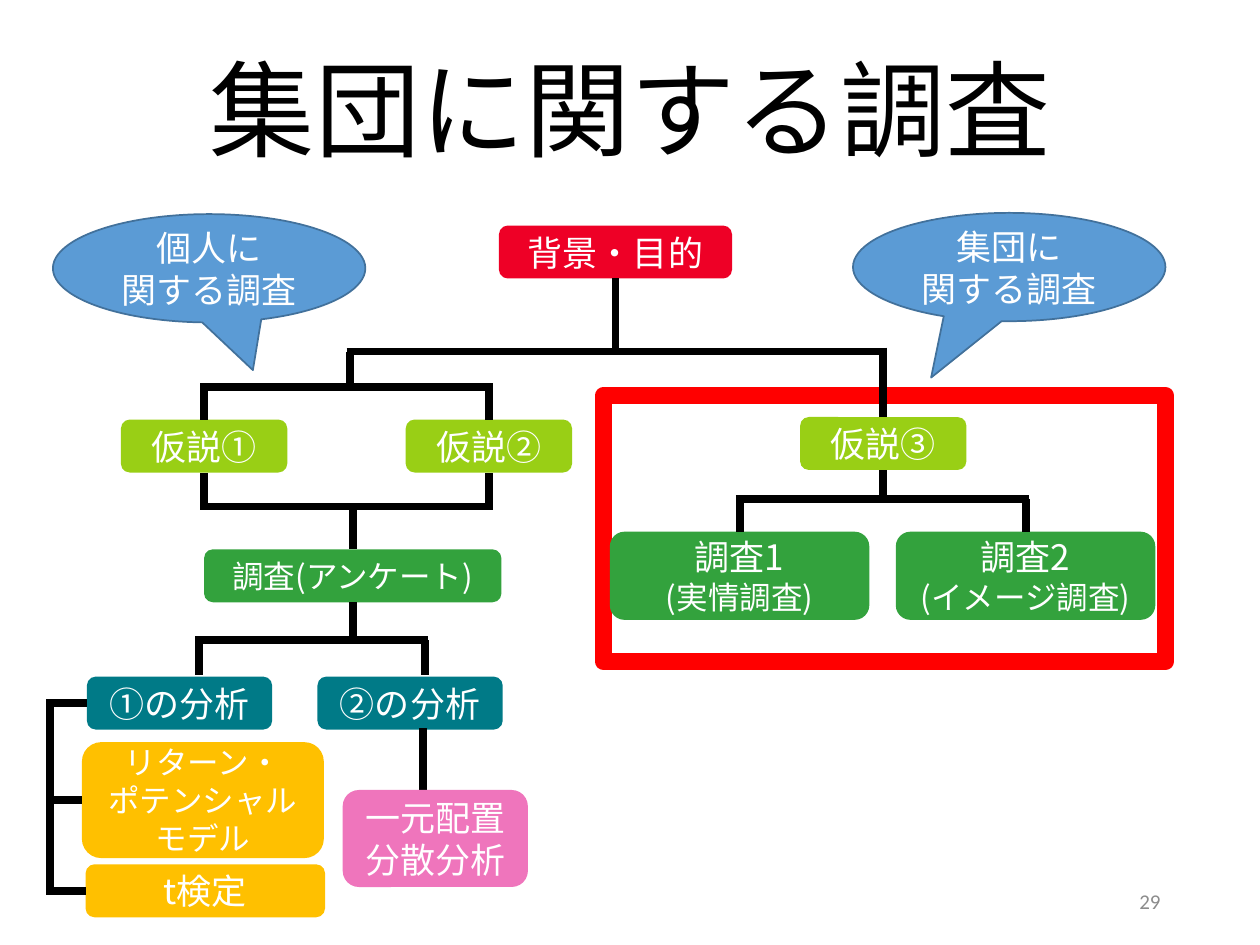
from lxml import etree
from pptx import Presentation
from pptx.dml.color import RGBColor
from pptx.enum.shapes import MSO_CONNECTOR, MSO_SHAPE
from pptx.enum.text import MSO_ANCHOR, MSO_AUTO_SIZE, PP_ALIGN
from pptx.oxml.ns import qn
from pptx.util import Inches, Pt

RECTANGLE = MSO_SHAPE.RECTANGLE
ROUNDED = MSO_SHAPE.ROUNDED_RECTANGLE
CALLOUT = MSO_SHAPE.OVAL_CALLOUT
STRAIGHT = MSO_CONNECTOR.STRAIGHT
CENTER, RIGHT = PP_ALIGN.CENTER, PP_ALIGN.RIGHT
MIDDLE, BOTTOM_ANCHOR = MSO_ANCHOR.MIDDLE, MSO_ANCHOR.BOTTOM
NO_AUTOFIT = MSO_AUTO_SIZE.NONE

TOP, LEFT, BOTTOM = 0, 1, 2  # connection sites of a rectangle
JAPANESE, LATIN = "Noto Sans CJK JP", "Calibri"
WHITE, BLACK, RED, GREY = "FFFFFF", "000000", "FF0000", "8C8C8C"
CRIMSON, LIME, GREEN, TEAL = "EE0026", "99CF15", "33A23D", "007A87"
AMBER, PINK, BLUE, DARK_BLUE = "FFC000", "EF75BC", "5B9BD5", "42719B"
LINE_WIDTH = 4.5
HALF_LINE = 0.03  # overlap that squares off the corners, in inches
ROW = 0.42  # height of a one-line box


def color(value):
    return RGBColor.from_string(value)


def write(frame, text, sizes=(20,), font=JAPANESE, fill=WHITE,
          align=CENTER, anchor=MIDDLE, spacing=None):
    """Write one paragraph per line; the last size holds for further lines."""
    frame.word_wrap = True
    frame.auto_size = NO_AUTOFIT
    frame.vertical_anchor = anchor
    for index, line_text in enumerate(text.split("\n")):
        para = frame.paragraphs[0] if index == 0 else frame.add_paragraph()
        para.alignment = align
        if spacing:
            para.line_spacing = spacing
        span = para.add_run()
        span.text = line_text
        span.font.size = Pt(sizes[min(index, len(sizes) - 1)])
        span.font.name = font
        span.font.color.rgb = color(fill)
        east_asian = etree.SubElement(span.font._element, qn("a:ea"))
        east_asian.set("typeface", font)


def add_box(page, box, kind=ROUNDED, fill=None, line=None, width=1):
    shape = page.shapes.add_shape(kind, *map(Inches, box))
    shape.shadow.inherit = False
    if fill:
        shape.fill.solid()
        shape.fill.fore_color.rgb = color(fill)
    else:
        shape.fill.background()
    if line:
        shape.line.color.rgb = color(line)
        shape.line.width = Pt(width)
    else:
        shape.line.fill.background()
    return shape


def add_node(page, text, box, fill, **text_format):
    node = add_box(page, box, fill=fill)
    write(node.text_frame, text, **text_format)
    return node


def add_line(page, start, end):
    line = page.shapes.add_connector(STRAIGHT, *map(Inches, start + end))
    line.line.color.rgb = color(BLACK)
    line.line.width = Pt(LINE_WIDTH)
    etree.SubElement(line._element.spPr, qn("a:effectLst"))
    return line


def add_rail(page, left, right, y):
    return add_line(page, (left - HALF_LINE, y), (right + HALF_LINE, y))


def add_branch(page, node, side, rail):
    """Run from a rail straight to the middle of a node's side."""
    middle_x = (node.left + node.width / 2) / Inches(1)
    middle_y = (node.top + node.height / 2) / Inches(1)
    start = (rail, middle_y) if side == LEFT else (middle_x, rail)
    branch = add_line(page, start, start)
    branch.end_connect(node, side)


def add_title(page, text, box):
    title = page.shapes.title
    title.left, title.top, title.width, title.height = map(Inches, box)
    write(title.text_frame, text, sizes=(60,), fill=BLACK,
          anchor=BOTTOM_ANCHOR, spacing=0.9)


def add_page_number(page, text, box):
    number = page.shapes.add_textbox(*map(Inches, box))
    write(number.text_frame, text, sizes=(12,), font=LATIN, fill=GREY, align=RIGHT)


def add_callout(page, text, box, tip):
    callout = add_box(page, box, kind=CALLOUT, fill=BLUE, line=DARK_BLUE)
    callout.adjustments[0], callout.adjustments[1] = tip
    write(callout.text_frame, text)


def add_background(page, box):
    """Root node, and the rail that splits into the two kinds of survey."""
    left, top, width, _ = box
    root = add_node(page, "背景・目的", (left + 1.18, top, 1.85, ROW), CRIMSON)
    rail = top + 1
    add_branch(page, root, BOTTOM, rail)
    add_rail(page, left, left + width, rail)
    add_line(page, (left, rail), (left, rail + 0.28))


def add_individual_survey(page, box):
    """Two hypotheses that merge into one questionnaire."""
    left, top, width, height = box
    node_width = 1.32
    upper, lower = top + 0.02, top + 0.97
    centers = left + node_width / 2, left + width - node_width / 2
    for text, center in zip(("仮説①", "仮説②"), centers):
        node = add_node(page, text, (center - node_width / 2, top + 0.28, node_width, ROW), LIME)
        add_branch(page, node, TOP, upper)
        add_branch(page, node, BOTTOM, lower)
    for y in (upper, lower):
        add_rail(page, *centers, y)
    survey = add_node(page, "調査(アンケート)", (left + 0.66, top + height - ROW, 2.36, ROW),
                      GREEN, sizes=(18,))
    add_branch(page, survey, TOP, lower)
    return survey


def add_analyses(page, box, survey):
    """Analyses of the questionnaire, with the methods of each."""
    left, top, width, height = box
    rail = top + 0.02
    drops = left + 1.18, left + 2.97
    add_branch(page, survey, BOTTOM, rail)
    add_rail(page, *drops, rail)
    for drop in drops:
        add_line(page, (drop, rail), (drop, top + 0.3))
    first, _ = [add_node(page, text, (left + offset, top + 0.31, 1.47, ROW), TEAL)
                for text, offset in (("①の分析", 0.29), ("②の分析", 2.12))]

    # Methods of the first analysis hang on a spine at the left edge
    model = add_node(page, "リターン・\nポテンシャル\nモデル",
                     (left + 0.25, top + 0.83, 1.92, 0.92), AMBER, sizes=(18,))
    test = add_node(page, "t検定", (left + 0.28, top + height - ROW, 1.9, ROW), AMBER)
    for node in (first, model, test):
        add_branch(page, node, LEFT, left)
    add_line(page, (left, top + 0.52 - HALF_LINE), (left, top + height - ROW / 2 + HALF_LINE))

    # Method of the second analysis
    add_line(page, (left + 2.96, top + 0.72), (left + 2.96, top + 1.21))
    add_node(page, "一元配置\n分散分析", (left + width - 1.47, top + 1.21, 1.47, 0.77), PINK)


def add_group_survey(page, box, rail):
    """Framed hypothesis with its two surveys."""
    left, top, width, _ = box
    add_box(page, box, kind=RECTANGLE, line=RED, width=10)
    hypothesis = add_node(page, "仮説③", (left + 1.56, top + 0.17, 1.32, ROW), LIME)
    add_branch(page, hypothesis, TOP, rail - HALF_LINE)
    split = top + 0.82
    add_branch(page, hypothesis, BOTTOM, split)
    node_width, gap = 2.06, 0.21
    node_left = left + 0.05
    for index, text in enumerate(("調査1\n(実情調査)", "調査2\n(イメージ調査)")):
        node = add_node(page, text, (node_left + index * (node_width + gap), top + 1.08,
                                     node_width, 0.7), GREEN, sizes=(20, 18))
        add_branch(page, node, TOP, split)
    center = node_left + node_width / 2
    add_rail(page, center, center + node_width + gap, split)


def main():
    deck = Presentation()
    deck.slide_width, deck.slide_height = Inches(10), Inches(7.5)
    page = deck.slides.add_slide(deck.slide_layouts[5])
    add_title(page, "集団に関する調査", (0.75, 0.27, 8.5, 1.15))
    add_page_number(page, "29", (7.06, 6.95, 2.25, 0.4))
    add_background(page, (2.78, 1.79, 4.23, 1.28))
    survey = add_individual_survey(page, (0.96, 3.05, 3.58, 1.73))
    add_analyses(page, (0.4, 5.06, 3.79, 2.22), survey)
    add_group_survey(page, (4.79, 3.14, 4.46, 2.11), rail=2.79)
    add_callout(page, "個人に\n関する調査", (0.42, 1.7, 2.48, 0.86), (0.14, 0.94))
    add_callout(page, "集団に\n関する調査", (6.77, 1.69, 2.48, 0.86), (-0.25, 1.02))
    deck.save("out.pptx")


if __name__ == "__main__":
    main()
